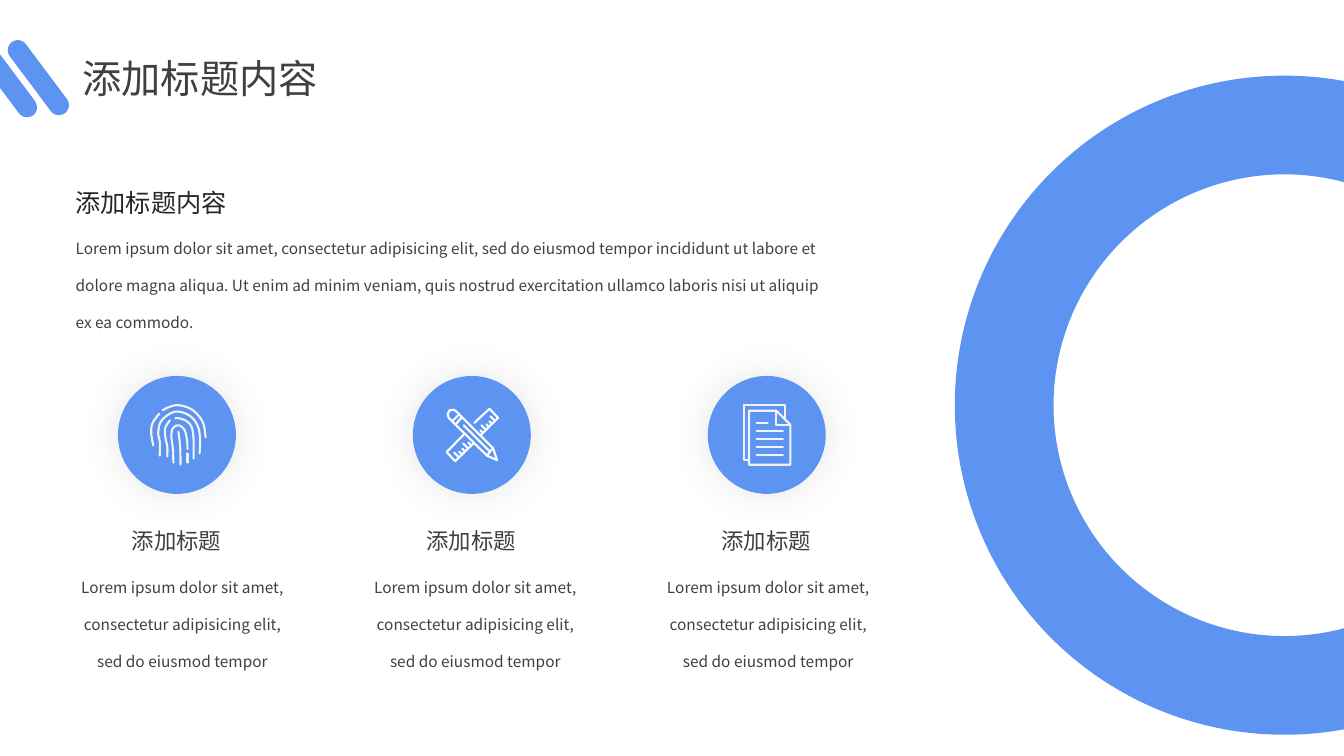
from dataclasses import dataclass

from lxml import etree
from pptx import Presentation
from pptx.dml.color import RGBColor
from pptx.enum.shapes import MSO_SHAPE
from pptx.enum.text import MSO_ANCHOR, MSO_AUTO_SIZE, PP_ALIGN
from pptx.oxml.ns import qn
from pptx.util import Inches, Pt

DISC = MSO_SHAPE.FLOWCHART_CONNECTOR
PILL = MSO_SHAPE.ROUNDED_RECTANGLE
LEFT, CENTER = PP_ALIGN.LEFT, PP_ALIGN.CENTER
MIDDLE = MSO_ANCHOR.MIDDLE
NO_FIT = MSO_AUTO_SIZE.NONE


@dataclass(frozen=True)
class Theme:
    """Colours, fonts and type sizes of the slide."""
    blue: RGBColor = RGBColor(0x5D, 0x94, 0xF1)
    pale: RGBColor = RGBColor(0xF2, 0xF2, 0xF2)
    white: RGBColor = RGBColor(0xFF, 0xFF, 0xFF)
    gray: RGBColor = RGBColor(0x40, 0x40, 0x40)
    dark: RGBColor = RGBColor(0x26, 0x26, 0x26)
    font: str = "Noto Sans CJK SC"
    alt_font: str = "Noto Sans CJK JP"
    title: int = 28
    head: int = 18
    label: int = 16
    body: int = 11
    ring: float = 70.5
    stroke: float = 1.5


THEME = Theme()

INTRO = ("Lorem ipsum dolor sit amet, consectetur adipisicing elit, sed do eiusmod "
         "tempor incididunt ut labore et dolore magna aliqua. Ut enim ad minim veniam, "
         "quis nostrud exercitation ullamco laboris nisi ut aliquip ex ea commodo.")
DETAIL = "Lorem ipsum dolor sit amet, consectetur adipisicing elit, sed do eiusmod tempor"

FINGER = [
    [(1.5, -3), (3, 9), (3.5, 20), (3.5, 29.5)],
    [(-14, -24.5), (-8, -27.5), (1.5, -29.5), (15, -25), (25.5, -13), (28.5, 2.5)],
    [(-17.5, -21), (-24, -12), (-25.5, -2), (-23.5, 10.5)],
    [(-17, 20.5), (-17, 7), (-18.5, -2), (-16, -13), (-7, -21), (2.5, -23),
     (14, -18), (21, -8), (23, 5), (22.5, 18.5)],
    [(-1.5, -16.5), (2, -16.5), (9, -14), (14.5, -8), (16.5, 4), (16.5, 23.5)],
    [(-7, -14.5), (-11.5, -7), (-11.5, 2), (-9.5, 12), (-9.5, 21.5)],
    [(10.5, 18.5), (10.5, 27.5)],
    [(-3.5, 27.5), (-4, 14), (-5.5, 1), (-4, -6.5), (1.5, -9.5), (7.5, -5),
     (10, 5), (10.5, 14)],
]
PENCIL = [
    [(-23, -17), (-24, -21), (-22, -24.5), (-18, -25), (-15.5, -23.5), (21, 13),
     (25, 25), (15, 20.5), (-23, -17)],
    [(-8, -9.5), (18, 16.5)],
    [(-19, -14), (-13, -20)],
    [(-15.5, -11), (-10.5, -17)],
    [(15, 20.5), (21, 13)],
]
RULER = [
    [(2.5, -12), (17.5, -26), (26, -17), (9, 0)],
    [(-7.5, -1), (-25, 17), (-16.5, 26), (1.5, 8.5)],
]
PAPER = [
    [(-17.5, -24), (9.5, -24), (23.5, -10), (23.5, 29.5), (-17.5, 29.5), (-17.5, -24)],
    [(9.5, -24), (9.5, -10), (23.5, -10)],
    [(-17.5, 24.5), (-22.5, 24.5), (-22.5, -29.5), (18.5, -29.5), (18.5, -16)],
    [(-10, -12), (1, -12)],
]


def smooth(points, steps=6):
    """Return a denser path that curves through the points."""
    path = [points[0]]
    ends = [points[0], *points, points[-1]]
    for a, b, c, d in zip(ends, ends[1:], ends[2:], ends[3:]):
        for step in range(1, steps + 1):
            t = step / steps
            path.append(tuple(
                (2 * q + (r - p) * t + (2 * p - 5 * q + 4 * r - s) * t ** 2
                 + (3 * q - p - 3 * r + s) * t ** 3) / 2
                for p, q, r, s in zip(a, b, c, d)))
    return path


def ticks():
    """Return the marks along the ruler, every third one long."""
    marks = []
    for i in (*range(5), *range(8, 13)):
        x, y = 23 - 3 * i, 3 * i - 14
        size = 2.5 if i % 3 else 4.5
        marks.append([(x, y), (x - size, y - size)])
    return marks


def add_icon(slide, x, y, strokes, color):
    """Draw strokes, in hundredths of an inch, around a centre."""
    unit = Inches(0.01)
    paths = [[(round(px * unit), round(py * unit)) for px, py in s] for s in strokes]
    pen = slide.shapes.build_freeform(*paths[0][0], scale=1.0)
    for i, path in enumerate(paths):
        if i:
            pen.move_to(*path[0])
        pen.add_line_segments(path[1:], close=False)
    icon = pen.convert_to_shape(Inches(x), Inches(y))
    icon.shadow.inherit = False
    icon.fill.background()
    icon.line.color.rgb = color
    icon.line.width = Pt(THEME.stroke)
    icon._element.spPr.find(qn("a:ln")).set("cap", "rnd")


def add_shape(slide, kind, x, y, w, h, turn=0):
    """Add a plain blue shape."""
    shape = slide.shapes.add_shape(kind, Inches(x), Inches(y), Inches(w), Inches(h))
    shape.shadow.inherit = False
    shape.rotation = turn
    shape.fill.solid()
    shape.fill.fore_color.rgb = THEME.blue
    shape.line.fill.background()
    return shape


def add_ring(slide):
    """Add the big ring at the right edge."""
    ring = add_shape(slide, DISC, 9.96, 1.24, 5.56, 5.56)
    ring.fill.background()
    ring.line.color.rgb = THEME.blue
    ring.line.width = Pt(THEME.ring)


def add_glow(shape):
    """Add a soft, faint shadow all around a shape."""
    glow = etree.SubElement(shape._element.spPr.find(qn("a:effectLst")),
                            qn("a:outerShdw"), blurRad=str(Pt(30)), dist="0",
                            algn="ctr", rotWithShape="0")
    tint = etree.SubElement(glow, qn("a:srgbClr"), val="000000")
    etree.SubElement(tint, qn("a:alpha"), val="10000")


def write(frame, text, size, color, font, align, space):
    """Put one styled run into a text frame."""
    frame.margin_left = frame.margin_right = 0
    frame.margin_top = frame.margin_bottom = 0
    frame.auto_size = NO_FIT
    frame.word_wrap = True
    para = frame.paragraphs[0]
    para.alignment = align
    para.line_spacing = space
    run = para.add_run()
    run.text = text
    run.font.size = Pt(size)
    run.font.color.rgb = color
    run.font.name = font
    etree.SubElement(run.font._element, qn("a:ea"), typeface=font)


def add_text(slide, x, y, w, h, text, size, space, align=CENTER,
             color=THEME.gray, font=THEME.font):
    """Add a text box without margins."""
    box = slide.shapes.add_textbox(Inches(x), Inches(y), Inches(w), Inches(h))
    write(box.text_frame, text, size, color, font, align, space)


def set_title(slide, text):
    """Place and fill the title."""
    title = slide.shapes.title
    title.left, title.top = Inches(0.72), Inches(0.49)
    title.width, title.height = Inches(2.53), Inches(0.57)
    write(title.text_frame, text, THEME.title, THEME.gray, THEME.font, CENTER, 1.0)
    title.text_frame.vertical_anchor = MIDDLE


def add_item(slide, i, strokes, color):
    """Add one column: disc, icon, label and detail."""
    x = 1.17 + 2.925 * i
    add_glow(add_shape(slide, DISC, x, 3.73, 1.17, 1.17))
    add_icon(slide, x + 0.585, 4.315, strokes, color)
    add_text(slide, x + 0.05, 5.1, 1.06, 0.45, "添加标题", THEME.label, 1.5)
    add_text(slide, 0.75 + 2.905 * i, 5.55, 2.12, 1.15, DETAIL, THEME.body, 2.0)


def main():
    """Build the slide and save it."""
    deck = Presentation()
    deck.slide_width, deck.slide_height = Inches(13.33), Inches(7.5)
    slide = deck.slides.add_slide(deck.slide_layouts[5])
    add_ring(slide)
    set_title(slide, "添加标题内容")
    for x, y, w in ((-0.4, 0.68, 0.91), (-0.06, 0.67, 0.88)):
        add_shape(slide, PILL, x, y, w, 0.2, 53.2).adjustments[0] = 0.5
    add_text(slide, 0.75, 1.71, 2.06, 0.45, "添加标题内容", THEME.head, 1.5,
             LEFT, THEME.dark, THEME.alt_font)
    add_text(slide, 0.75, 2.19, 7.45, 1.25, INTRO, THEME.body, 2.0, LEFT)
    rows = [[(-10, y), (16, y)] for y in range(-4, 21, 8)]
    icons = (([smooth(s) for s in FINGER], THEME.pale),
             (PENCIL + RULER + ticks(), THEME.white),
             (PAPER + rows, THEME.pale))
    for i, (strokes, color) in enumerate(icons):
        add_item(slide, i, strokes, color)
    deck.save("out.pptx")


if __name__ == "__main__":
    main()
